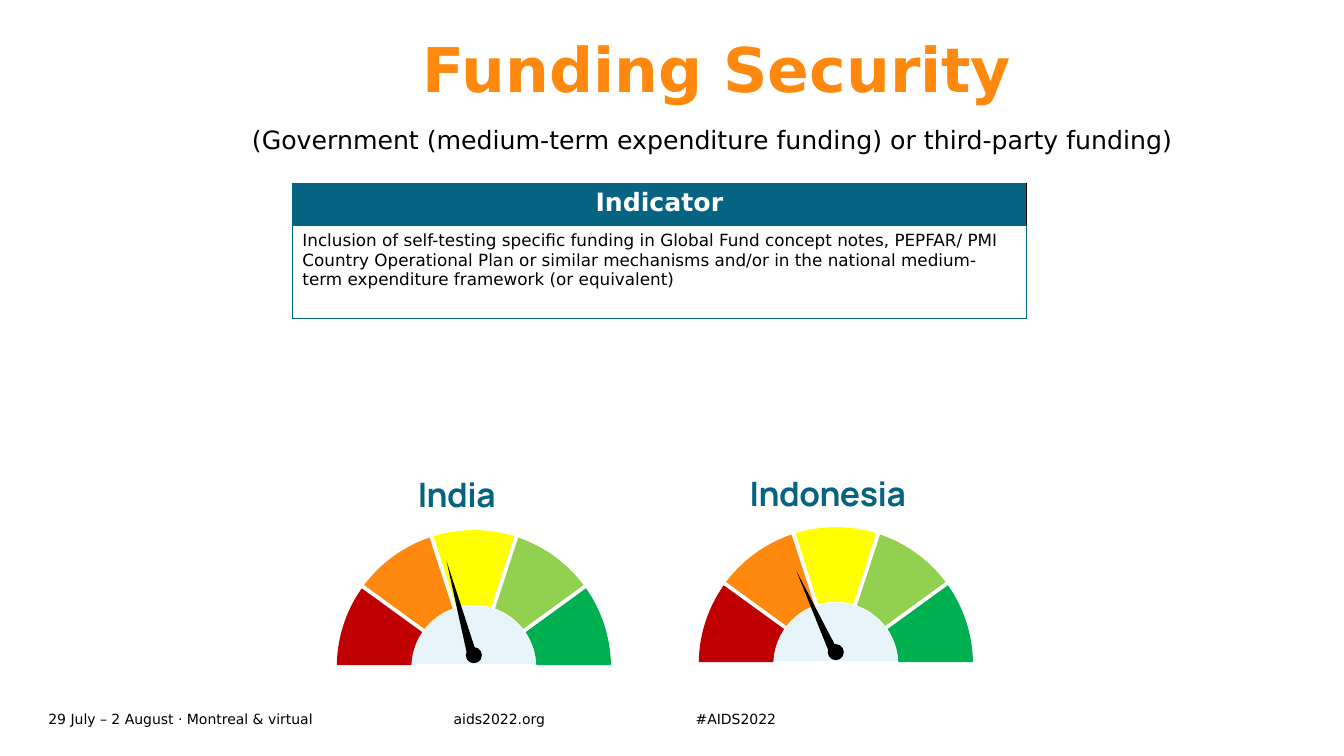
import math

import pptx
import pptx.dml.color
import pptx.enum.shapes
import pptx.enum.text
import pptx.oxml
import pptx.oxml.ns
import pptx.util
from pptx.util import Inches

SANS = "DejaVu Sans"
TEAL, ORANGE, BLACK, WHITE = "076382", "FF890E", "000000", "FFFFFF"
SEGMENT_COLOURS = ["00B050", "92D050", "FFFF00", ORANGE, "C00000"]
OUTER_RADIUS, INNER_RADIUS, HUB_RADIUS = 1.36, 0.62, 0.61
LEFT = pptx.enum.text.PP_ALIGN.LEFT
CENTER = pptx.enum.text.PP_ALIGN.CENTER
TOP = pptx.enum.text.MSO_ANCHOR.TOP
MIDDLE = pptx.enum.text.MSO_ANCHOR.MIDDLE
BOTTOM = pptx.enum.text.MSO_ANCHOR.BOTTOM


def rgb(colour):
    return pptx.dml.color.RGBColor.from_string(colour)


def write(p, text, size, colour, bold=False, font=SANS, align=LEFT):
    p.alignment = align
    r = p.add_run()
    r.text = text
    r.font.name = font
    r.font.size = pptx.util.Pt(size)
    r.font.bold = bold
    r.font.color.rgb = rgb(colour)
    return r


def add_text(s, box, text, size, colour, inset=True, anchor=TOP, grow=False, **style):
    sp = s.shapes.add_textbox(*map(Inches, box))
    tf = sp.text_frame
    tf.word_wrap = True
    tf.vertical_anchor = anchor
    if grow:
        tf.auto_size = pptx.enum.text.MSO_AUTO_SIZE.SHAPE_TO_FIT_TEXT
    if not inset:
        tf.margin_left = tf.margin_right = tf.margin_top = tf.margin_bottom = 0
    return write(tf.paragraphs[0], text, size, colour, **style)


def paint(sp, colour):
    sp.shadow.inherit = False
    sp.fill.solid()
    sp.fill.fore_color.rgb = rgb(colour)
    sp.line.fill.background()


def add_border(cell, side, colour, width):
    ln = pptx.oxml.parse_xml(
        f'<a:ln{side} {pptx.oxml.ns.nsdecls("a")} w="{pptx.util.Pt(width)}">'
        f'<a:solidFill><a:srgbClr val="{colour}"/></a:solidFill></a:ln{side}>')
    cell._tc.get_or_add_tcPr().append(ln)


def add_indicator_table(s):
    table = s.shapes.add_table(2, 1, Inches(2.9), Inches(1.82), Inches(7.28), Inches(1.34)).table
    table.first_row = table.horz_banding = False
    table.rows[0].height, table.rows[1].height = Inches(0.42), Inches(0.92)
    header, body = table.cell(0, 0), table.cell(1, 0)
    for side, colour, width in [("L", TEAL, 0.5), ("R", BLACK, 1), ("T", TEAL, 0.5), ("B", TEAL, 1)]:
        add_border(header, side, colour, width)
        add_border(body, side, TEAL, 1)
    header.fill.solid()
    header.fill.fore_color.rgb = rgb(TEAL)
    body.fill.background()
    write(header.text_frame.paragraphs[0], "Indicator", 18, WHITE, bold=True, align=CENTER)
    write(body.text_frame.paragraphs[0],
          "Inclusion of self-testing specific funding in Global Fund concept notes, PEPFAR/ PMI "
          "Country Operational Plan or similar mechanisms and/or in the national medium-term "
          "expenditure framework (or equivalent)", 12, BLACK)


def arc(cx, cy, radius, start, end, inset):
    """First point and Bezier pieces of an arc ending `inset` inches inside its rays, cut at the crown."""
    trim = math.degrees(math.asin(inset / radius))
    stops = [start + trim, end - trim]
    if start < 90 < end:
        stops.insert(1, 90)

    def point(angle, along=0):
        c, d = math.cos(math.radians(angle)), math.sin(math.radians(angle))
        return cx + radius * (c - along * d), cy - radius * (d + along * c)

    pieces = []
    for a, b in zip(stops, stops[1:]):
        reach = 4 / 3 * math.tan(math.radians(b - a) / 4)
        pieces.append([point(a, reach), point(b, -reach), point(b)])
    return point(stops[0]), pieces


def backwards(first, pieces):
    points = [first] + [pt for piece in pieces for pt in piece]
    points.reverse()
    return points[0], [points[i:i + 3] for i in range(1, len(points), 3)]


def add_outline(shapes, first, pieces, colour):
    """Closed shape from pieces of one point (line) or three points (Bezier curve)."""
    builder = shapes.build_freeform(Inches(first[0]), Inches(first[1]))
    builder.add_line_segments([(Inches(x), Inches(y)) for piece in pieces for x, y in piece])
    sp = builder.convert_to_shape()
    lines = iter(sp._element.findall(".//" + pptx.oxml.ns.qn("a:lnTo")))
    for piece in pieces:
        group = [next(lines) for _ in piece]
        if len(piece) == 3:
            curve = pptx.oxml.parse_xml(f'<a:cubicBezTo {pptx.oxml.ns.nsdecls("a")}/>')
            group[0].addprevious(curve)
            for line in group:
                curve.append(line[0])
                line.getparent().remove(line)
    outline = sp._element.find(".//" + pptx.oxml.ns.qn("a:moveTo")).getparent()
    outline.append(pptx.oxml.parse_xml(f'<a:close {pptx.oxml.ns.nsdecls("a")}/>'))
    paint(sp, colour)


def add_gauge(s, cx, cy, needle_dx, needle_dy, needle_angle):
    """Five-part half dial around (cx, cy); the needle's middle is offset by (needle_dx, needle_dy)."""
    shapes = s.shapes.add_group_shape().shapes
    sweep = 180 / len(SEGMENT_COLOURS)
    for i, colour in enumerate(SEGMENT_COLOURS):
        start, end = i * sweep, (i + 1) * sweep
        first, outer = arc(cx, cy, OUTER_RADIUS, start, end, 0.02)
        corner, inner = backwards(*arc(cx, cy, INNER_RADIUS, start, end, 0.02))
        add_outline(shapes, first, outer + [[corner]] + inner, colour)
    add_outline(shapes, *arc(cx, cy, HUB_RADIUS, 0, 180, 0.03), "E7F5FA")

    kinds = pptx.enum.shapes.MSO_SHAPE
    width, length, pin = 0.09, 0.92, 0.16
    needle = shapes.add_shape(
        kinds.ISOSCELES_TRIANGLE, Inches(cx + needle_dx - width / 2),
        Inches(cy + needle_dy - length / 2), Inches(width), Inches(length))
    needle.rotation = needle_angle
    pivot = shapes.add_shape(
        kinds.OVAL, Inches(cx - pin / 2), Inches(cy - 0.12 - pin / 2), Inches(pin), Inches(pin))
    for sp in (needle, pivot):
        paint(sp, BLACK)


def add_country(s, name, label_left, label_top, *gauge):
    r = add_text(s, (label_left, label_top, 2.54, 0.5), name, 24, TEAL, anchor=BOTTOM,
                 grow=True, bold=True, font="Manrope", align=CENTER)
    r._r.get_or_add_rPr().set("spc", "-30")
    add_gauge(s, *gauge)


def main():
    prs = pptx.Presentation()
    prs.slide_width, prs.slide_height = Inches(13.33), Inches(7.5)
    s = prs.slides.add_slide(prs.slide_layouts[6])

    for left, width, text in [(0.48, 4.02, "29 July – 2 August · Montreal & virtual"),
                              (4.5, 1.93, "aids2022.org"),
                              (6.9, 1.93, "#AIDS2022")]:
        add_text(s, (left, 7.01, width, 0.24), text, 10, BLACK, inset=False, anchor=MIDDLE)

    add_text(s, (4.19, 0.39, 10.07, 1.34), "Funding Security", 44, ORANGE, inset=False, bold=True)
    s.shapes[-1].text_frame.paragraphs[0].line_spacing = 0.9
    add_indicator_table(s)
    add_text(s, (2.31, 1.18, 9.51, 0.4),
             "(Government (medium-term expenditure funding) or third-party funding)",
             18, BLACK, grow=True, align=CENTER)

    add_country(s, "India", 3.26, 4.65, 4.7, 6.62, -0.15, -0.61, 344.8)
    add_country(s, "Indonesia", 6.94, 4.64, 8.29, 6.59, -0.2, -0.51, 335.3)
    prs.save("out.pptx")


if __name__ == "__main__":
    main()
